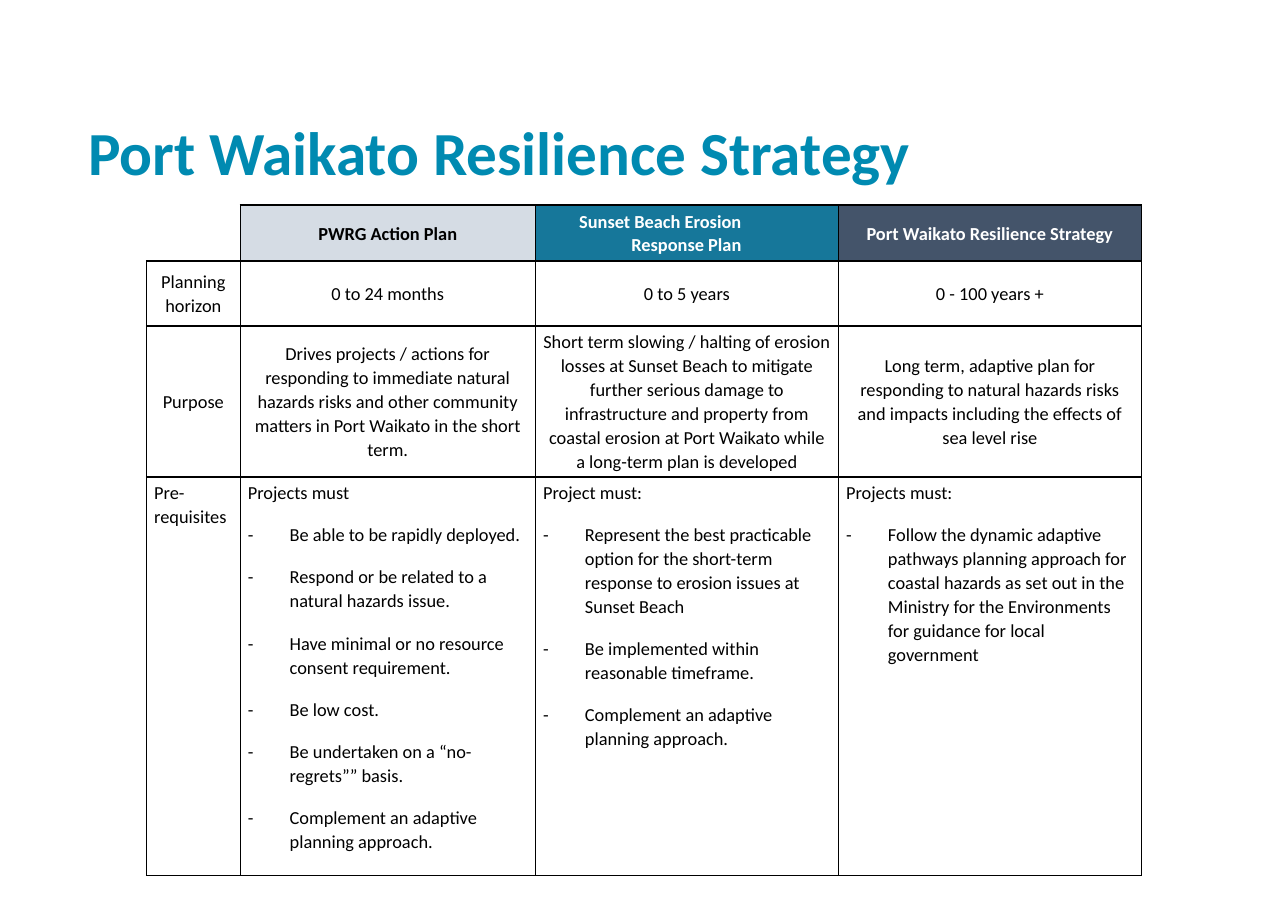
"""Build the Port Waikato Resilience Strategy comparison slide."""
from dataclasses import dataclass

from lxml.etree import SubElement
from pptx import Presentation
from pptx.dml.color import RGBColor
from pptx.enum.text import MSO_ANCHOR, PP_ALIGN
from pptx.oxml.ns import qn
from pptx.slide import Slide
from pptx.table import _Cell
from pptx.text.text import _Paragraph
from pptx.util import Inches, Pt


@dataclass(frozen=True)
class Theme:
    font: str = "Calibri"
    title_size: int = 40
    table_size: int = 12
    title: str = "008AB1"
    ink: str = "000000"
    white: str = "FFFFFF"
    action: str = "D5DCE4"
    erosion: str = "16779A"
    resilience: str = "44546A"


@dataclass(frozen=True)
class Plan:
    name: str
    fill: str
    color: str
    horizon: str
    purpose: str
    lead: str
    requirements: tuple[str, ...]
    align: PP_ALIGN = PP_ALIGN.CENTER
    right_inset: float = 0.07


THEME = Theme()
COLUMN_WIDTHS = (0.85, 2.68, 2.75, 2.75)
ROW_HEIGHTS = (0.51, 0.59, 1.37, 3.62)
ROW_LABELS = ("Planning horizon", "Purpose", "Pre-requisites")
ALL_SIDES = "LRTB"

PLANS = (
    Plan(
        "PWRG Action Plan", THEME.action, THEME.ink, "0 to 24 months",
        "Drives projects / actions for responding to immediate natural hazards risks "
        "and other community matters in Port Waikato in the short term.",
        "Projects must",
        (
            "Be able to be rapidly deployed.",
            "Respond or be related to a natural hazards issue.",
            "Have minimal or no resource consent requirement.",
            "Be low cost.",
            "Be undertaken on a “no-regrets”” basis.",
            "Complement an adaptive planning approach.",
        ),
    ),
    Plan(
        "Sunset Beach Erosion Response Plan", THEME.erosion, THEME.white, "0 to 5 years",
        "Short term slowing / halting of erosion losses at Sunset Beach to mitigate "
        "further serious damage to infrastructure and property from coastal erosion "
        "at Port Waikato while a long-term plan is developed",
        "Project must:",
        (
            "Represent the best practicable option for the short-term response to "
            "erosion issues at Sunset Beach",
            "Be implemented within reasonable timeframe.",
            "Complement an adaptive planning approach.",
        ),
        PP_ALIGN.RIGHT, 0.88,
    ),
    Plan(
        "Port Waikato Resilience Strategy", THEME.resilience, THEME.white, "0 - 100 years +",
        "Long term, adaptive plan for responding to natural hazards risks and impacts "
        "including the effects of sea level rise",
        "Projects must:",
        (
            "Follow the dynamic adaptive pathways planning approach for coastal hazards "
            "as set out in the Ministry for the Environments for guidance for local government",
        ),
    ),
)


def add_run(paragraph: _Paragraph, text: str, size: int, color: str, bold: bool = False) -> None:
    run = paragraph.add_run()
    run.text = text
    run.font.name = THEME.font
    run.font.size = Pt(size)
    run.font.bold = bold
    run.font.color.rgb = RGBColor.from_string(color)


def add_dash(paragraph: _Paragraph) -> None:
    properties = paragraph._p.get_or_add_pPr()
    properties.set("marL", str(Inches(0.38)))
    properties.set("indent", str(-Inches(0.38)))
    SubElement(properties, qn("a:buFont"), typeface=THEME.font)
    SubElement(properties, qn("a:buChar"), char="-")


def style_cell(cell: _Cell, sides: str = ALL_SIDES, fill: str | None = None) -> None:
    properties = cell._tc.get_or_add_tcPr()
    for side in ALL_SIDES:
        border = SubElement(properties, qn(f"a:ln{side}"), w=str(Pt(1)))
        if side in sides:
            SubElement(SubElement(border, qn("a:solidFill")), qn("a:srgbClr"), val=THEME.ink)
        else:
            SubElement(border, qn("a:noFill"))
    if fill:
        cell.fill.solid()
        cell.fill.fore_color.rgb = RGBColor.from_string(fill)
    else:
        cell.fill.background()
    cell.margin_left = cell.margin_right = Inches(0.07)
    cell.margin_top = cell.margin_bottom = Inches(0.03)


def write_cell(cell: _Cell, text: str, align: PP_ALIGN = PP_ALIGN.CENTER,
               color: str = THEME.ink, bold: bool = False) -> None:
    paragraph = cell.text_frame.paragraphs[0]
    paragraph.alignment = align
    paragraph.line_spacing = 1.07
    paragraph.space_after = Pt(8)
    add_run(paragraph, text, THEME.table_size, color, bold)
    cell.vertical_anchor = MSO_ANCHOR.MIDDLE


def write_requirements(cell: _Cell, plan: Plan) -> None:
    write_cell(cell, plan.lead, PP_ALIGN.LEFT)
    cell.vertical_anchor = MSO_ANCHOR.TOP
    cell.text_frame.paragraphs[0].space_after = Pt(6)
    for requirement in plan.requirements:
        paragraph = cell.text_frame.add_paragraph()
        paragraph.alignment = PP_ALIGN.LEFT
        paragraph.line_spacing = 1.07
        paragraph.space_before = paragraph.space_after = Pt(6)
        add_dash(paragraph)
        add_run(paragraph, requirement, THEME.table_size, THEME.ink)


def add_title(slide: Slide) -> None:
    title = slide.shapes.add_textbox(Inches(0.8), Inches(0.79), Inches(10.08), Inches(1.25))
    frame = title.text_frame
    frame.word_wrap = True
    frame.vertical_anchor = MSO_ANCHOR.MIDDLE
    frame.margin_left = frame.margin_right = frame.margin_top = frame.margin_bottom = 0
    frame.paragraphs[0].line_spacing = 0.9
    add_run(frame.paragraphs[0], "Port Waikato Resilience Strategy",
            THEME.title_size, THEME.title, True)


def add_comparison(slide: Slide) -> None:
    comparison = slide.shapes.add_table(
        len(ROW_HEIGHTS), len(COLUMN_WIDTHS), Inches(1.33), Inches(1.86),
        Inches(sum(COLUMN_WIDTHS)), Inches(sum(ROW_HEIGHTS))).table
    comparison.first_row = comparison.horz_banding = False
    for column, width in zip(comparison.columns, COLUMN_WIDTHS):
        column.width = Inches(width)
    for row, height in zip(comparison.rows, ROW_HEIGHTS):
        row.height = Inches(height)

    style_cell(comparison.cell(0, 0), sides="RB")
    for row_index, label in enumerate(ROW_LABELS, 1):
        heading = comparison.cell(row_index, 0)
        style_cell(heading)
        write_cell(heading, label)
    heading.text_frame.paragraphs[0].alignment = PP_ALIGN.LEFT
    heading.vertical_anchor = MSO_ANCHOR.TOP

    for column_index, plan in enumerate(PLANS, 1):
        name, horizon, purpose, requirements = (
            comparison.cell(row_index, column_index) for row_index in range(len(ROW_HEIGHTS)))
        style_cell(name, fill=plan.fill)
        for cell in (horizon, purpose, requirements):
            style_cell(cell)
        write_cell(name, plan.name, plan.align, plan.color, True)
        name.margin_right = Inches(plan.right_inset)
        write_cell(horizon, plan.horizon)
        write_cell(purpose, plan.purpose)
        write_requirements(requirements, plan)


def main() -> None:
    deck = Presentation()
    deck.slide_width, deck.slide_height = Inches(11.69), Inches(8.27)
    slide = deck.slides.add_slide(deck.slide_layouts[6])
    add_title(slide)
    add_comparison(slide)
    deck.save("out.pptx")


if __name__ == "__main__":
    main()
